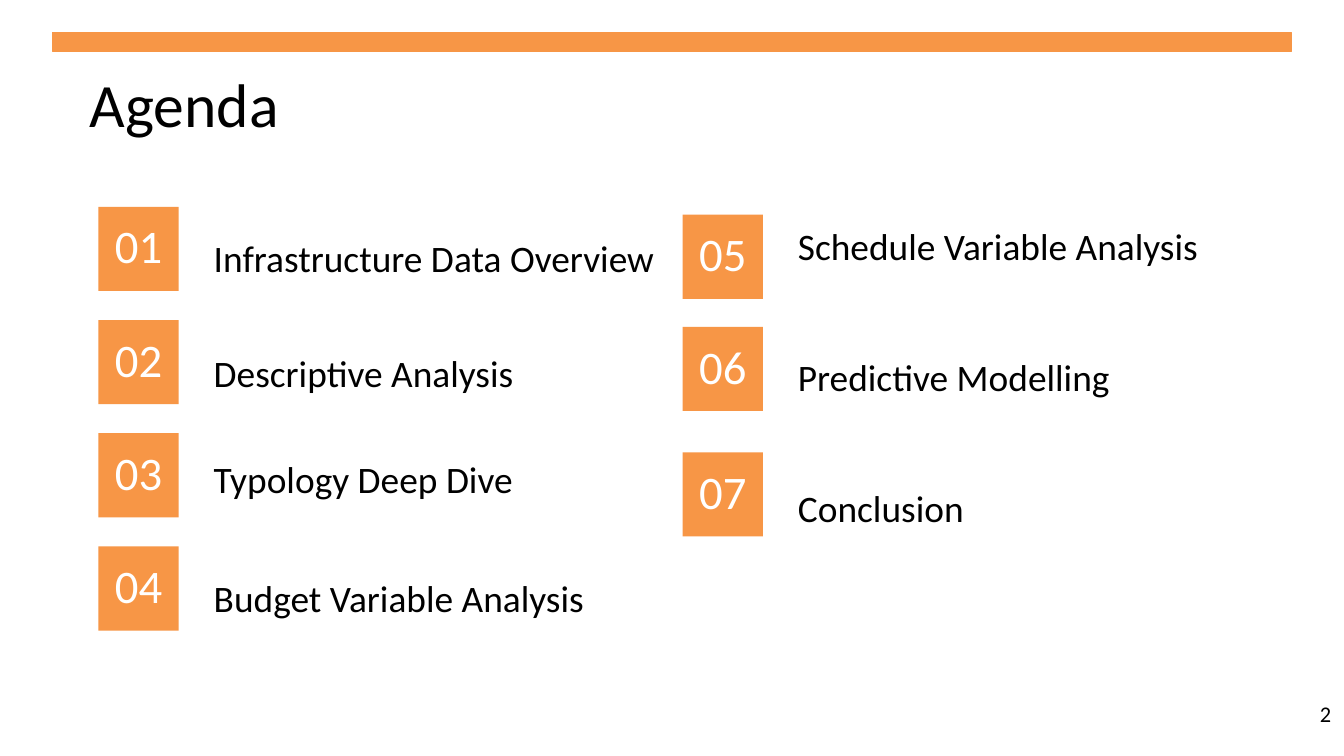
"""Build the agenda slide with seven numbered topics in two columns."""
from pptx import Presentation
from pptx.dml.color import RGBColor
from pptx.enum.shapes import MSO_SHAPE
from pptx.enum.text import MSO_ANCHOR, PP_ALIGN
from pptx.util import Cm, Pt

FONT = "Calibri"
ORANGE, BLACK, WHITE = "F79646", "000000", "FFFFFF"
TILE_WIDTH, TILE_HEIGHT = 1.52, 1.59
LABEL_OFFSET = 2.05
FIRST_TOP, PITCH = 3.91, 2.14

# Each topic: tile top, label top, label width, label height, line spacing, label
COLUMNS = [
    (1.86, [
        (FIRST_TOP, 4.25, 8.79, 0.94, 1.15, "Infrastructure Data Overview"),
        (FIRST_TOP + PITCH, 5.72, 7.47, 0.94, 2.0, "Descriptive Analysis"),
        (FIRST_TOP + 2 * PITCH, 8.44, 7.98, 1.09, 1.15, "Typology Deep Dive"),
        (FIRST_TOP + 3 * PITCH, 10.68, 9.47, 0.94, 1.15, "Budget Variable Analysis"),
    ]),
    (12.9, [
        (4.06, 4.04, 9.47, 1.65, 1.15, "Schedule Variable Analysis"),
        (6.18, 6.51, 9.47, 0.94, 1.15, "Predictive Modelling"),
        (8.55, 8.26, 9.47, 0.94, 2.0, "Conclusion"),
    ]),
]


def color(value):
    return RGBColor.from_string(value)


def write(box, text, size, ink=BLACK, align=PP_ALIGN.LEFT, anchor=MSO_ANCHOR.TOP, spacing=1.0):
    frame = box.text_frame
    frame.word_wrap = True
    frame.vertical_anchor = anchor
    frame.margin_left = frame.margin_right = Cm(0.13)
    frame.margin_top = frame.margin_bottom = Cm(0.06)
    para = frame.paragraphs[0]
    para.alignment = align
    para.line_spacing = spacing
    span = para.add_run()
    span.text = text
    span.font.name = FONT
    span.font.size = Pt(size)
    span.font.color.rgb = color(ink)


def add_text(page, left, top, width, height, text, size, **style):
    box = page.shapes.add_textbox(Cm(left), Cm(top), Cm(width), Cm(height))
    write(box, text, size, **style)


def add_block(page, kind, left, top, width, height):
    block = page.shapes.add_shape(kind, Cm(left), Cm(top), Cm(width), Cm(height))
    block.shadow.inherit = False
    block.fill.solid()
    block.fill.fore_color.rgb = color(ORANGE)
    block.line.fill.background()
    return block


def main():
    deck = Presentation()
    deck.slide_width, deck.slide_height = Cm(25.4), Cm(14.29)
    page = deck.slides.add_slide(deck.slide_layouts[6])

    add_text(page, 1.57, 1.24, 21.41, 1.6, "Agenda", 33, anchor=MSO_ANCHOR.MIDDLE, spacing=0.9)
    number = 0
    for left, topics in COLUMNS:
        for tile_top, label_top, width, height, spacing, label in topics:
            number += 1
            tile = add_block(page, MSO_SHAPE.RECTANGLE, left, tile_top, TILE_WIDTH, TILE_HEIGHT)
            write(tile, f"{number:02}", 25, ink=WHITE, align=PP_ALIGN.CENTER,
                  anchor=MSO_ANCHOR.MIDDLE, spacing=0.9)
            add_text(page, left + LABEL_OFFSET, label_top, width, height, label, 20,
                     spacing=spacing)
    add_text(page, 23.77, 13.18, 1.52, 1.09, "2", 12, align=PP_ALIGN.RIGHT)

    banner = add_block(page, MSO_SHAPE.FLOWCHART_PROCESS, 0.99, 0.62, 23.42, 0.35)
    banner.line.color.rgb = color(ORANGE)
    banner.line.width = Pt(0.75)
    deck.save("out.pptx")


if __name__ == "__main__":
    main()
